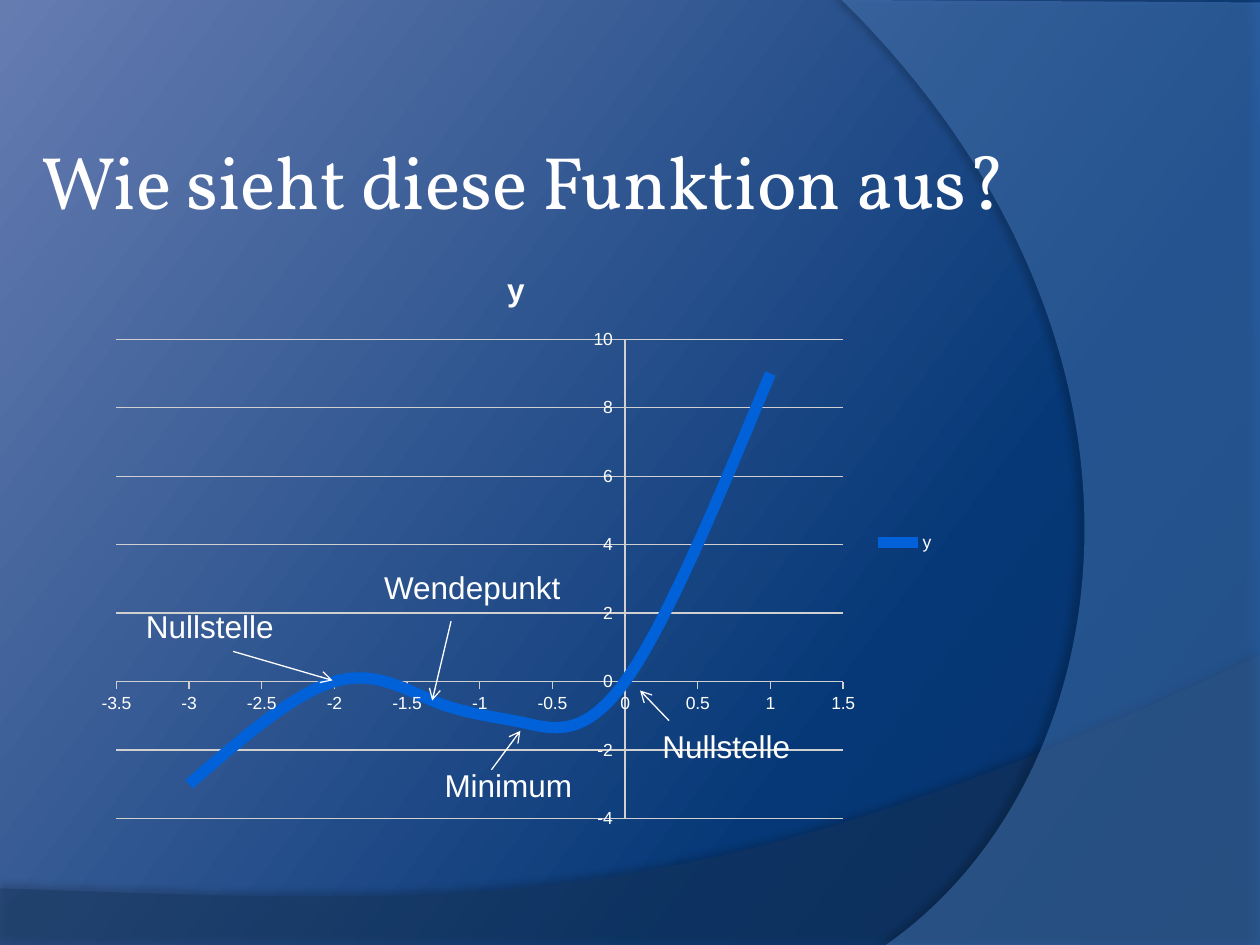
from copy import deepcopy

from lxml import etree
from pptx import Presentation
from pptx.chart.data import XyChartData
from pptx.dml.color import RGBColor
from pptx.enum import chart as chart_enum, shapes, text
from pptx.oxml import parse_xml
from pptx.oxml.ns import nsdecls, qn
from pptx.util import Inches, Pt

WHITE = RGBColor(0xFF, 0xFF, 0xFF)
GRID = RGBColor(0xD0, 0xD0, 0xD0)
CURVE = RGBColor(0x00, 0x61, 0xD9)
NAVY = RGBColor(0x17, 0x37, 0x5E)
SKY = RGBColor(0x55, 0x8E, 0xD5)
BACKGROUND = [
    (0, RGBColor(0x05, 0x2F, 0x64)),
    (0.3, RGBColor(0x06, 0x38, 0x77)),
    (1, RGBColor(0x65, 0x7C, 0xB1)),
]

TITLE = "Wie sieht diese Funktion aus?"
BLANK = (None, None)  # an empty row of the data sheet
POINTS = ([BLANK] * 2
          + [(-3, -3), (-2, 0), (-1.3, -0.6), (-0.7, -1.2), (0, 0), (1, 9)]
          + [BLANK] * 3)
# text, left, top, width, arrow start, arrow end
LABELS = [
    ("Nullstelle", 1.06, 4.77, 1.5, (1.85, 5.17), (2.64, 5.4)),
    ("Nullstelle", 5.16, 5.72, 1.5, (5.31, 5.72), (5.08, 5.48)),
    ("Minimum", 3.43, 6.03, 1.5, (3.9, 6.11), (4.13, 5.8)),
    ("Wendepunkt", 2.95, 4.46, 2.05, (3.58, 4.93), (3.43, 5.56)),
]
# corners, Bézier curve, colour, opacity, shadow (opacity, distance, direction)
WAVES = [
    ([(0, 7.51), (10, 7.51)], [(10, 5.2), (5.59, 7.29), (3.91, 7.19), (0, 7.05)],
     NAVY, 45, (35, 3.5, 270)),
    ([(10, 0.02), (10, 7.5)], [(7.03, 7.5), (8.91, 6.19), (9.47, 2.75), (6.68, 0)],
     SKY, 40, (45, 4, 180)),
]


def paint_background(slide):
    fill = slide.background.fill
    fill.gradient()
    fill.gradient_angle = 143
    stop_list = slide.element.xpath(".//a:gsLst")[0]
    stop_list.append(deepcopy(stop_list[0]))
    for stop, (position, colour) in zip(fill.gradient_stops, BACKGROUND):
        stop.position = position
        stop.color.rgb = colour


def bend_last_lines(shape):
    """Turn the last three line ends of the outline into one Bézier curve."""
    lines = shape.element.xpath(".//a:path/a:lnTo")[-3:]
    curve = etree.Element(qn("a:cubicBezTo"))
    lines[0].addprevious(curve)
    for line in lines:
        curve.append(line[0])
        line.getparent().remove(line)


def add_wave(slide, corners, curve, colour, opacity, shadow):
    outline = [(Inches(x), Inches(y)) for x, y in corners + curve]
    builder = slide.shapes.build_freeform(*outline[0])
    builder.add_line_segments(outline[1:], close=True)
    shape = builder.convert_to_shape()
    # closing adds no line end of its own, so the curve comes last
    bend_last_lines(shape)
    shape.fill.solid()
    shape.fill.fore_color.rgb = colour
    shape.line.fill.background()
    fill_colour = shape.element.spPr.find(qn("a:solidFill"))[0]
    etree.SubElement(fill_colour, qn("a:alpha"), val=str(opacity * 1000))
    shadow_opacity, distance, direction = shadow
    shape.element.spPr.append(parse_xml(
        f'<a:effectLst {nsdecls("a")}><a:outerShdw blurRad="{Pt(4)}" '
        f'dist="{Pt(distance)}" dir="{direction * 60000}" rotWithShape="0">'
        f'<a:srgbClr val="000000"><a:alpha val="{shadow_opacity * 1000}"/>'
        '</a:srgbClr></a:outerShdw></a:effectLst>'))


def style_font(font, size, name="Arial"):
    font.size = Pt(size)
    font.name = name
    font.color.rgb = WHITE


def place_title(slide):
    title = slide.shapes.title
    title.left, title.top = Inches(0.28), Inches(0.92)
    title.width, title.height = Inches(8.27), Inches(0.86)
    frame = title.text_frame
    frame.text = TITLE
    frame.vertical_anchor = text.MSO_ANCHOR.BOTTOM
    frame.margin_left = frame.margin_right = Inches(0.05)
    frame.margin_top = frame.margin_bottom = 0
    paragraph = frame.paragraphs[0]
    paragraph.alignment = text.PP_ALIGN.LEFT
    style_font(paragraph.runs[0].font, 42.5, "Vollkorn")
    slide.shapes.element.append(title.element)  # in front of the waves


def add_function_chart(slide):
    data = XyChartData()
    series_data = data.add_series("y")
    for x, y in POINTS:
        series_data.add_data_point(x, y)
    chart = slide.shapes.add_chart(
        chart_enum.XL_CHART_TYPE.XY_SCATTER_SMOOTH_NO_MARKERS,
        Inches(0.67), Inches(1.94), Inches(6.85), Inches(4.73), data).chart
    style_font(chart.font, 10)
    chart.has_title = True
    chart.chart_title.text_frame.text = "y"
    title_font = chart.chart_title.text_frame.paragraphs[0].runs[0].font
    style_font(title_font, 18)
    title_font.bold = True
    chart.has_legend = True
    chart.legend.position = chart_enum.XL_LEGEND_POSITION.RIGHT
    chart.legend.include_in_layout = False

    chart.plots[0].vary_by_categories = False
    series = chart.plots[0].series[0]
    series_element = series._element
    series_element.get_or_add_smooth().val = True
    for point in series_element.xpath('.//c:pt[c:v="None"]'):
        point.getparent().remove(point)
    series.format.line.color.rgb = CURVE
    series.format.line.width = Pt(6.5)

    axes = [(chart.category_axis, -3.5, 1.5, 0.5), (chart.value_axis, -4, 10, 2)]
    for axis, low, high, step in axes:
        axis.minimum_scale, axis.maximum_scale, axis.major_unit = low, high, step
        axis.major_tick_mark = chart_enum.XL_TICK_MARK.OUTSIDE
        axis.tick_labels.number_format = "General"
        axis.tick_labels.number_format_is_linked = False
        axis.format.line.color.rgb = GRID
        axis.format.line.width = Pt(0.75)
    chart.category_axis.has_major_gridlines = False
    chart.value_axis.has_major_gridlines = True
    grid_line = chart.value_axis.major_gridlines.format.line
    grid_line.color.rgb = GRID
    grid_line.width = Pt(0.75)


def add_label(slide, wording, left, top, width):
    box = slide.shapes.add_textbox(
        Inches(left), Inches(top), Inches(width), Inches(0.4))
    box.text_frame.word_wrap = True
    box.text_frame.text = wording
    style_font(box.text_frame.paragraphs[0].runs[0].font, 18)


def add_arrow(slide, start, end):
    arrow = slide.shapes.add_connector(
        shapes.MSO_CONNECTOR.STRAIGHT, *map(Inches, start + end))
    arrow.line.color.rgb = WHITE
    arrow.line.width = Pt(0.75)
    etree.SubElement(arrow.line._get_or_add_ln(), qn("a:tailEnd"), type="arrow")
    etree.SubElement(arrow.element.spPr, qn("a:effectLst"))


def main():
    presentation = Presentation()
    presentation.slide_width, presentation.slide_height = Inches(10), Inches(7.5)
    slide = presentation.slides.add_slide(presentation.slide_layouts[5])
    paint_background(slide)
    for wave in WAVES:
        add_wave(slide, *wave)
    place_title(slide)
    add_function_chart(slide)
    for wording, left, top, width, start, end in LABELS:
        add_label(slide, wording, left, top, width)
        add_arrow(slide, start, end)
    presentation.save("out.pptx")


if __name__ == "__main__":
    main()
